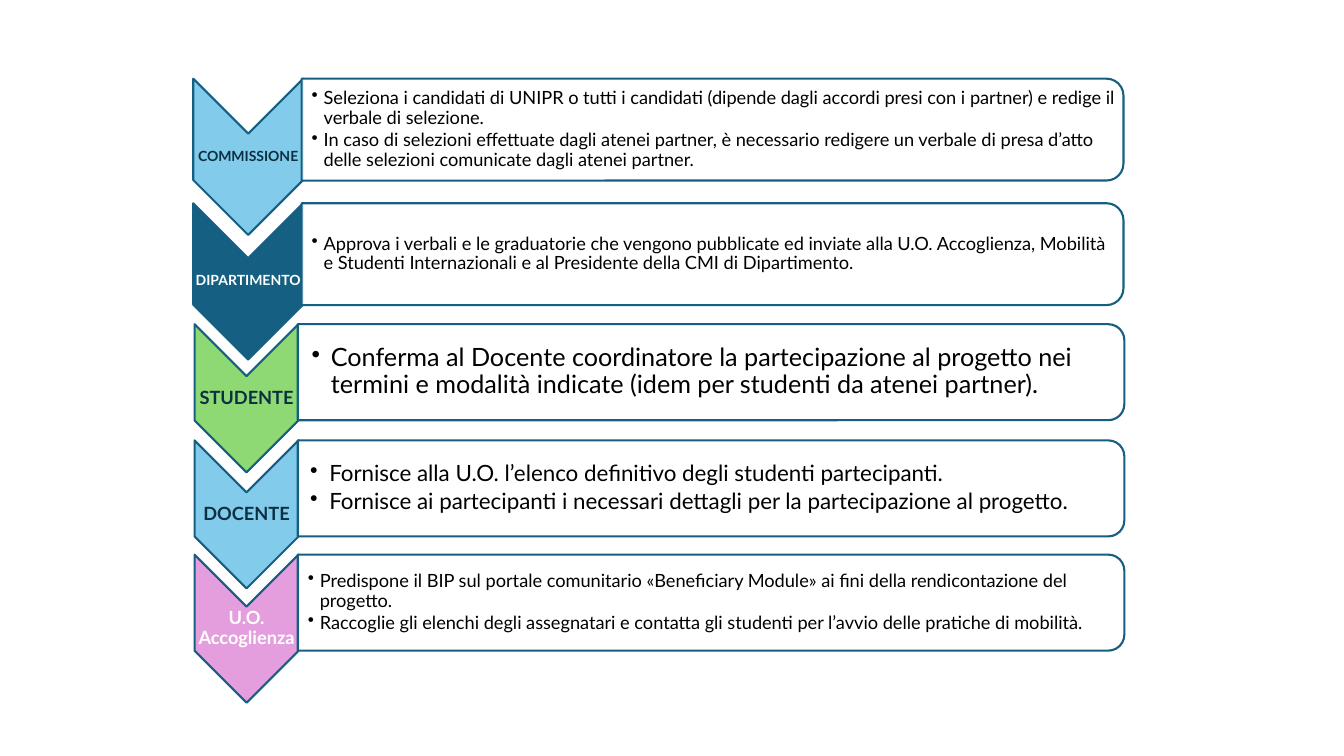
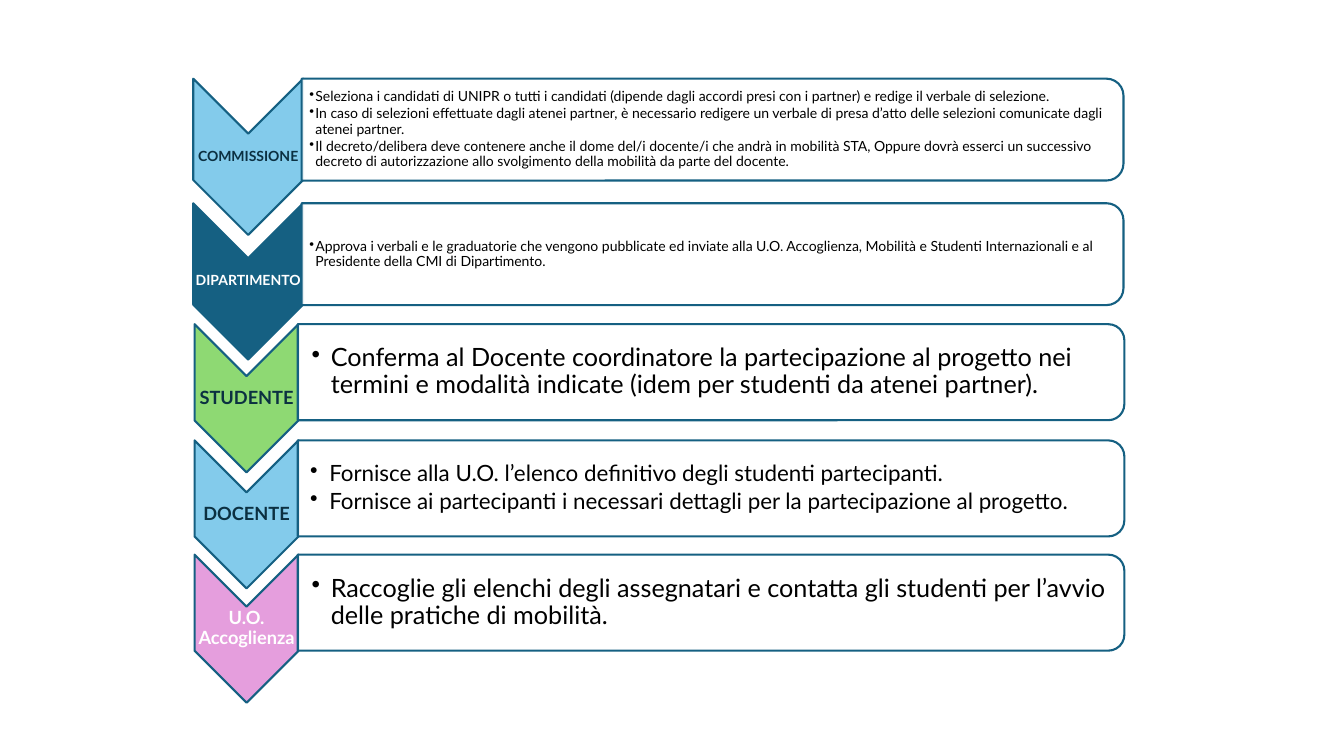
import dataclasses

import pptx
import pptx.dml.color
import pptx.enum.shapes
import pptx.enum.text
import pptx.oxml
import pptx.oxml.ns
import pptx.util

Pt = pptx.util.Pt
SHAPES = pptx.enum.shapes.MSO_SHAPE
ALIGN = pptx.enum.text.PP_ALIGN


@dataclasses.dataclass(frozen=True)
class Theme:
    font: str = "Lato"
    outline: str = "156082"
    sky: str = "83CBEB"
    green: str = "8ED973"
    pink: str = "E59EDD"
    navy: str = "0B3041"
    white: str = "FFFFFF"
    black: str = "000000"
    small: int = 10
    medium: int = 13
    large: int = 16
    huge: int = 18
    line_width: float = 1.5
    line_spacing: float = 0.9
    panel_opacity: int = 90


THEME = Theme()
HANGING = {THEME.small: 4.3, THEME.medium: 8.6, THEME.large: 13.7, THEME.huge: 13.7}
EDGE = 0.7  # text inset


@dataclasses.dataclass(frozen=True)
class RowSize:
    """Lengths in points of one chevron and the panel beside it."""
    chevron_left: float
    chevron_width: float
    chevron_height: float
    panel_left: float
    panel_width: float
    panel_height: float


WIDE = RowSize(138, 78.5, 111.6, 215.5, 587, 72.8)
COMPACT = RowSize(139, 74.2, 105.8, 212.7, 590.4, 68.6)


@dataclasses.dataclass(frozen=True)
class Role:
    label: str
    top: float
    size: RowSize
    fill: str
    label_color: str
    label_size: int


ROLES = [
    Role("COMMISSIONE", 56.2, WIDE, THEME.sky, THEME.navy, THEME.small),
    Role("DIPARTIMENTO", 145.2, WIDE, THEME.outline, THEME.white, THEME.small),
    Role("STUDENTE", 231.6, COMPACT, THEME.green, THEME.navy, THEME.medium),
    Role("DOCENTE", 314.6, COMPACT, THEME.sky, THEME.navy, THEME.medium),
    Role("U.O. Accoglienza", 396.2, COMPACT, THEME.pink, THEME.white, THEME.medium),
]

SELECTION = [
    "Seleziona i candidati di UNIPR o tutti i candidati (dipende dagli accordi presi con i "
    "partner) e redige il verbale di selezione.",
    "In caso di selezioni effettuate dagli atenei partner, è necessario redigere un verbale di "
    "presa d’atto delle selezioni comunicate dagli atenei partner.",
]
DECREE = (
    "Il decreto/delibera deve contenere anche il dome del/i docente/i che andrà in mobilità STA, "
    "Oppure dovrà esserci un successivo decreto di autorizzazione allo svolgimento della mobilità "
    "da parte del docente."
)
APPROVAL = [
    "Approva i verbali e le graduatorie che vengono pubblicate ed inviate alla U.O. Accoglienza, "
    "Mobilità e Studenti Internazionali e al Presidente della CMI di Dipartimento."
]
CONFIRMATION = [
    "Conferma al Docente coordinatore la partecipazione al progetto nei termini e modalità "
    "indicate (idem per studenti da atenei partner)."
]
DETAILS = [
    "Fornisce alla U.O. l’elenco definitivo degli studenti partecipanti.",
    "Fornisce ai partecipanti i necessari dettagli per la partecipazione al progetto.",
]
PORTAL = (
    "Predispone il BIP sul portale comunitario «Beneficiary Module» ai fini della "
    "rendicontazione del progetto."
)
LISTS = (
    "Raccoglie gli elenchi degli assegnatari e contatta gli studenti per l’avvio delle pratiche "
    "di mobilità."
)

# For each slide: the tasks and type size of every role, in the order of ROLES.
SLIDES = [
    [
        (SELECTION, THEME.medium),
        (APPROVAL, THEME.medium),
        (CONFIRMATION, THEME.huge),
        (DETAILS, THEME.large),
        ([PORTAL, LISTS], THEME.medium),
    ],
    [
        (SELECTION + [DECREE], THEME.small),
        (APPROVAL, THEME.small),
        (CONFIRMATION, THEME.huge),
        (DETAILS, THEME.large),
        ([LISTS], THEME.huge),
    ],
]


def rgb(color):
    return pptx.dml.color.RGBColor.from_string(color)


def add_bullet(paragraph, hanging):
    properties = paragraph._p.get_or_add_pPr()
    properties.set("marL", str(Pt(hanging)))
    properties.set("indent", str(-Pt(hanging)))
    bullet = pptx.oxml.parse_xml(f'<a:buChar {pptx.oxml.ns.nsdecls("a")} char="•"/>')
    properties.append(bullet)


def write_paragraph(paragraph, text, *, size, color, bold=False, align=ALIGN.LEFT,
                    after=0.15, hanging=None):
    """Fill a paragraph; after is a share of the type size."""
    if hanging is not None:
        add_bullet(paragraph, hanging)
    paragraph.alignment = align
    paragraph.line_spacing = THEME.line_spacing
    paragraph.space_after = Pt(after * size)
    run = paragraph.add_run()
    run.text = text
    run.font.name = THEME.font
    run.font.size = Pt(size)
    run.font.bold = bold
    run.font.color.rgb = rgb(color)


class Deck:
    def __init__(self):
        self.presentation = pptx.Presentation()
        self.presentation.slide_width = Pt(960)
        self.presentation.slide_height = Pt(540)
        self.slide = None

    def add_slide(self):
        self.slide = self.presentation.slides.add_slide(self.presentation.slide_layouts[6])

    def turned_shape(self, kind, left, top, width, height, fill, opacity=100):
        """Add a shape turned by 90 degrees that covers the given area."""
        shift = (width - height) / 2
        shape = self.slide.shapes.add_shape(
            kind, Pt(left + shift), Pt(top - shift), Pt(height), Pt(width))
        shape.rotation = 90
        shape.shadow.inherit = False
        shape.fill.solid()
        shape.fill.fore_color.rgb = rgb(fill)
        if opacity < 100:
            color = shape._element.spPr.find(".//" + pptx.oxml.ns.qn("a:srgbClr"))
            color.append(pptx.oxml.parse_xml(
                f'<a:alpha {pptx.oxml.ns.nsdecls("a")} val="{opacity * 1000}"/>'))
        shape.line.color.rgb = rgb(THEME.outline)
        shape.line.width = Pt(THEME.line_width)

    def text(self, left, top, width, height, texts, inset=EDGE, **style):
        box = self.slide.shapes.add_textbox(Pt(left), Pt(top), Pt(width), Pt(height))
        frame = box.text_frame
        frame.word_wrap = True
        frame.vertical_anchor = pptx.enum.text.MSO_ANCHOR.MIDDLE
        frame.margin_left = Pt(inset)
        frame.margin_top = frame.margin_right = frame.margin_bottom = Pt(EDGE)
        for index, text in enumerate(texts):
            paragraph = frame.add_paragraph() if index else frame.paragraphs[0]
            write_paragraph(paragraph, text, **style)

    def chevron(self, role):
        size = role.size
        left, width, height = size.chevron_left, size.chevron_width, size.chevron_height
        self.turned_shape(SHAPES.CHEVRON, left, role.top, width, height, role.fill)
        self.text(left, role.top + width / 2, width, height - width, [role.label],
                  size=role.label_size, color=role.label_color, bold=True,
                  align=ALIGN.CENTER, after=0.35)

    def panel(self, role, tasks, type_size):
        size = role.size
        left, width, height = size.panel_left, size.panel_width, size.panel_height
        self.turned_shape(SHAPES.ROUND_2_SAME_RECTANGLE, left, role.top, width, height,
                          THEME.white, THEME.panel_opacity)
        margin = 3.6
        self.text(left, role.top + margin, width - margin, height - 2 * margin, tasks,
                  inset=0.55 * type_size, size=type_size, color=THEME.black,
                  hanging=HANGING[type_size])


def main():
    deck = Deck()
    for contents in SLIDES:
        deck.add_slide()
        for role, (tasks, type_size) in zip(ROLES, contents):
            deck.chevron(role)
            deck.panel(role, tasks, type_size)
    deck.presentation.save("out.pptx")


if __name__ == "__main__":
    main()
